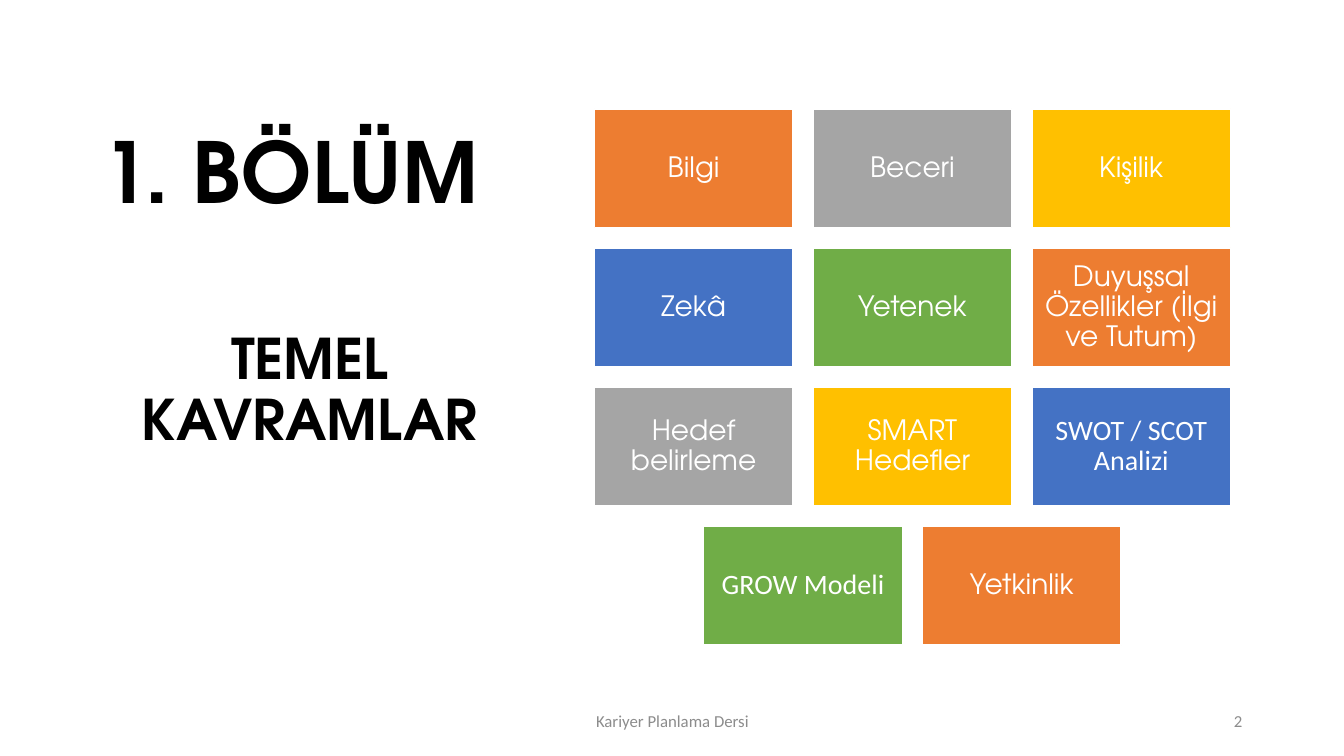
"""Build the chapter-opening slide with its grid of basic concepts."""
from dataclasses import dataclass

from pptx import Presentation
from pptx.dml.color import RGBColor
from pptx.enum.shapes import MSO_SHAPE
from pptx.enum.text import MSO_ANCHOR, PP_ALIGN
from pptx.util import Inches, Pt


@dataclass(frozen=True)
class Theme:
    heading_font: str = "TeX Gyre Adventor"
    body_font: str = "Calibri"
    ink: str = "000000"
    white: str = "FFFFFF"
    muted: str = "8C8C8C"
    tiles: tuple = ("ED7D31", "A5A5A5", "FFC000", "4472C4", "70AD47")
    title_size: int = 60
    subtitle_size: int = 40
    tile_size: int = 20
    footer_size: int = 12


THEME = Theme()
TITLE = "1. BÖLÜM"
SUBTITLE = "TEMEL KAVRAMLAR"
FOOTER = "Kariyer Planlama Dersi"
PAGE_NUMBER = "2"
CONCEPT_ROWS = [
    ["Bilgi", "Beceri", "Kişilik"],
    ["Zekâ", "Yetenek", "Duyuşsal Özellikler (İlgi ve Tutum)"],
    ["Hedef belirleme", "SMART Hedefler", "SWOT / SCOT Analizi"],
    ["GROW Modeli", "Yetkinlik"],
]
BODY_FONT_CONCEPTS = {"SWOT / SCOT Analizi", "GROW Modeli"}

SLIDE_SIZE = (13.33, 7.5)
TITLE_BOX = (0.92, 0.5, 4.3, 1.75)
SUBTITLE_BOX = (0.92, 2.69, 4.3, 2.4)
FOOTER_BOX = (4.42, 6.95, 4.5, 0.4)
PAGE_BOX = (9.42, 6.95, 3, 0.4)
GRID_CENTER, GRID_TOP = 9.05, 1.08
TILE_WIDTH, TILE_HEIGHT, TILE_GAP = 1.97, 1.18, 0.2
TILE_INSET = 0.08


def write(shape, text, font, size, color, align=PP_ALIGN.CENTER,
          anchor=MSO_ANCHOR.MIDDLE, bold=False, line_spacing=0.9):
    frame = shape.text_frame
    frame.text = text
    frame.word_wrap = True
    frame.vertical_anchor = anchor
    paragraph = frame.paragraphs[0]
    paragraph.alignment = align
    paragraph.line_spacing = line_spacing
    run_font = paragraph.runs[0].font
    run_font.name = font
    run_font.size = Pt(size)
    run_font.bold = bold
    run_font.color.rgb = RGBColor.from_string(color)


def add_text(slide, box, *args, **style):
    shape = slide.shapes.add_textbox(*map(Inches, box))
    write(shape, *args, **style)


def add_tile(slide, left, top, concept, color):
    box = (left, top, TILE_WIDTH, TILE_HEIGHT)
    tile = slide.shapes.add_shape(MSO_SHAPE.RECTANGLE, *map(Inches, box))
    tile.shadow.inherit = False
    tile.fill.solid()
    tile.fill.fore_color.rgb = RGBColor.from_string(color)
    tile.line.color.rgb = RGBColor.from_string(THEME.white)
    tile.line.width = Pt(1)
    frame = tile.text_frame
    frame.margin_left = frame.margin_right = Inches(TILE_INSET)
    frame.margin_top = frame.margin_bottom = Inches(TILE_INSET)
    font = THEME.body_font if concept in BODY_FONT_CONCEPTS else THEME.heading_font
    write(tile, concept, font, THEME.tile_size, THEME.white)


def add_concepts(slide):
    position = 0
    for row, concepts in enumerate(CONCEPT_ROWS):
        row_width = len(concepts) * (TILE_WIDTH + TILE_GAP) - TILE_GAP
        row_left = GRID_CENTER - row_width / 2
        top = GRID_TOP + row * (TILE_HEIGHT + TILE_GAP)
        for column, concept in enumerate(concepts):
            left = row_left + column * (TILE_WIDTH + TILE_GAP)
            color = THEME.tiles[position % len(THEME.tiles)]
            add_tile(slide, left, top, concept, color)
            position += 1


def main():
    presentation = Presentation()
    presentation.slide_width, presentation.slide_height = map(Inches, SLIDE_SIZE)
    slide = presentation.slides.add_slide(presentation.slide_layouts[6])
    add_text(slide, TITLE_BOX, TITLE, THEME.heading_font, THEME.title_size,
             THEME.ink, align=PP_ALIGN.LEFT, anchor=MSO_ANCHOR.BOTTOM, bold=True)
    add_concepts(slide)
    add_text(slide, SUBTITLE_BOX, SUBTITLE, THEME.heading_font,
             THEME.subtitle_size, THEME.ink, bold=True)
    add_text(slide, FOOTER_BOX, FOOTER, THEME.body_font, THEME.footer_size,
             THEME.muted, line_spacing=1.0)
    add_text(slide, PAGE_BOX, PAGE_NUMBER, THEME.body_font, THEME.footer_size,
             THEME.muted, align=PP_ALIGN.RIGHT, line_spacing=1.0)
    presentation.save("out.pptx")


if __name__ == "__main__":
    main()
